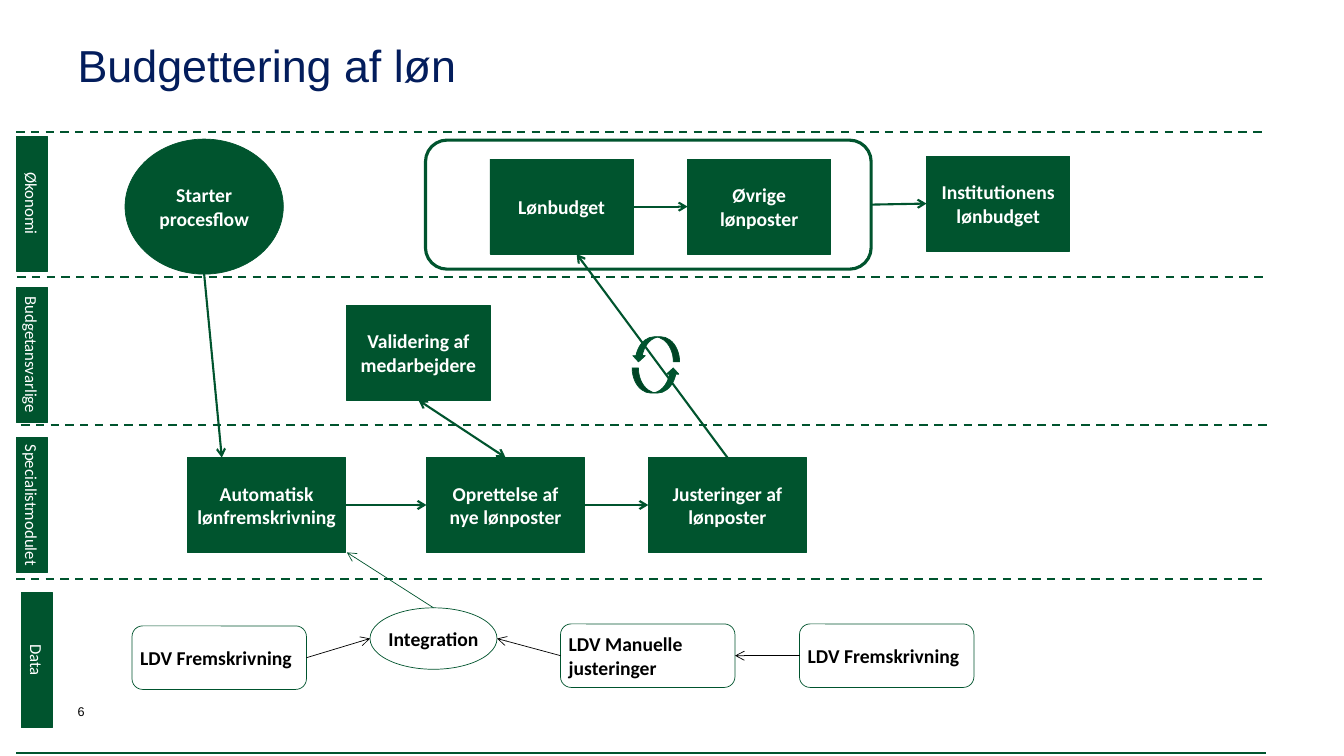
from lxml import etree
from pptx import Presentation
from pptx.dml.color import RGBColor
from pptx.enum.dml import MSO_LINE
from pptx.enum.shapes import MSO_CONNECTOR, MSO_SHAPE
from pptx.enum.text import MSO_ANCHOR, PP_ALIGN
from pptx.oxml.ns import qn
from pptx.util import Inches, Pt

RECT, OVAL, ROUND = MSO_SHAPE.RECTANGLE, MSO_SHAPE.OVAL, MSO_SHAPE.ROUNDED_RECTANGLE
CYCLE = MSO_SHAPE.CURVED_UP_ARROW
STRAIGHT = MSO_CONNECTOR.STRAIGHT
DASH = MSO_LINE.DASH
ANCHOR_TOP, ANCHOR_MIDDLE = MSO_ANCHOR.TOP, MSO_ANCHOR.MIDDLE
LEFT_ALIGN, CENTER = PP_ALIGN.LEFT, PP_ALIGN.CENTER
TOP, LEFT, BOTTOM, RIGHT = range(4)

COLORS = {"green": "00542E", "navy": "031D5C", "white": "FFFFFF", "black": "000000"}

TITLE = "Budgettering af løn"
PAGE_NUMBER = "6"
LANES = [
    ("Økonomi", 0.16, 1.35),
    ("Budgetansvarlige", 0.16, 2.85),
    ("Specialistmodulet", 0.16, 4.34),
    ("Data", 0.21, 5.88),
]
LANE_SIZE = (0.31, 1.34)
DIVIDERS = [(0.16, 1.31, True), (0.17, 2.75, True), (0.21, 4.22, True),
            (0.16, 5.74, True), (0.16, 7.47, False)]
DIVIDER_LENGTH = 12.4

SMALL, WIDE, SOURCE = (1.42, 0.94), (1.57, 0.94), (1.73, 0.63)
NORMAL, TIGHT, NONE = (0.1, 0.05), (0.04, 0.05), (0, 0)
STEPS = {
    "start": ("Starter procesflow", OVAL, (1.24, 1.38), (1.57, 1.34), NORMAL),
    "validation": ("Validering af medarbejdere", RECT, (3.44, 3.03), SMALL, NORMAL),
    "projection": ("Automatisk lønfremskrivning", RECT, (1.86, 4.54), WIDE, TIGHT),
    "creation": ("Oprettelse af nye lønposter", RECT, (4.23, 4.54), WIDE, NORMAL),
    "adjustment": ("Justeringer af lønposter", RECT, (6.43, 4.54), WIDE, NORMAL),
    "budget": ("Lønbudget", RECT, (4.86, 1.58), SMALL, NORMAL),
    "other": ("Øvrige lønposter", RECT, (6.82, 1.58), SMALL, NORMAL),
    "institution": ("Institutionens lønbudget", RECT, (9.19, 1.55), SMALL, NORMAL),
}
DATA_SOURCES = {
    "ldv_first": ("LDV Fremskrivning", ROUND, (1.31, 6.21), SOURCE),
    "integration": ("Integration", OVAL, (3.67, 6.03), (1.26, 0.61)),
    "ldv_manual": ("LDV Manuelle justeringer", ROUND, (5.56, 6.19), SOURCE),
    "ldv_last": ("LDV Fremskrivning", ROUND, (7.93, 6.19), SOURCE),
}
BUDGET_FRAME = ((4.22, 1.39), (4.42, 1.28))
CYCLE_ARROWS = [((6.27, 3.65), 0), ((6.27, 3.34), 180)]
CYCLE_SIZE = (0.47, 0.25)

FLOWS = [
    (("frame", RIGHT), ("institution", LEFT), "green", 1.5, False),
    (("ldv_first", RIGHT), ("integration", LEFT), "black", 0.5, False),
    (("ldv_manual", LEFT), ("integration", RIGHT), "black", 0.5, False),
    (("ldv_last", LEFT), ("ldv_manual", RIGHT), "black", 0.5, False),
    (("start", BOTTOM), (2.2, 4.54), "green", 1.5, False),
    (("integration", TOP), (3.44, 5.48), "green", 0.5, False),
    (("projection", RIGHT), ("creation", LEFT), "green", 1.5, False),
    (("creation", RIGHT), ("adjustment", LEFT), "green", 1.5, False),
    (("adjustment", TOP), (5.72, 2.52), "green", 1.5, False),
    (("budget", RIGHT), ("other", LEFT), "green", 1.5, False),
    (("creation", TOP), ("validation", BOTTOM), "green", 1.5, True),
]

prs = Presentation()
prs.slide_width, prs.slide_height = Inches(13.33), Inches(7.5)
slide = prs.slides.add_slide(prs.slide_layouts[5])
shapes = slide.shapes


def rgb(name):
    return RGBColor.from_string(COLORS[name])


def write(frame, text, size, color, align, font="Calibri", bold=False, insets=NONE):
    frame.word_wrap = True
    frame.margin_left = frame.margin_right = Inches(insets[0])
    frame.margin_top = frame.margin_bottom = Inches(insets[1])
    frame.text = text
    paragraph = frame.paragraphs[0]
    paragraph.alignment = align
    paragraph.font.name = font
    paragraph.font.size = Pt(size)
    paragraph.font.bold = bold
    paragraph.font.color.rgb = rgb(color)


def add_box(kind, position, size, filled=True, weight=0.5):
    box = shapes.add_shape(kind, *map(Inches, position + size))
    box.shadow.inherit = False
    if filled:
        box.fill.solid()
        box.fill.fore_color.rgb = rgb("green")
    else:
        box.fill.background()
    box.line.color.rgb = rgb("green")
    box.line.width = Pt(weight)
    box.text_frame.vertical_anchor = ANCHOR_MIDDLE
    return box


def add_line(start, end, color, weight):
    line = shapes.add_connector(STRAIGHT, *start, *end)
    line.line.color.rgb = rgb(color)
    line.line.width = Pt(weight)
    etree.SubElement(line.line._get_or_add_ln().getparent(), qn("a:effectLst"))
    return line


def side_point(box, side):
    x = box.left + (box.width // 2, 0, box.width // 2, box.width)[side]
    y = box.top + (0, box.height // 2, box.height, box.height // 2)[side]
    return x, y


def locate(end):
    if end[0] in boxes:
        return side_point(boxes[end[0]], end[1])
    return tuple(map(Inches, end))


def joinable(end):
    return end[0] in boxes and boxes[end[0]].auto_shape_type != OVAL


title = shapes.title
title.left, title.top, title.width, title.height = map(Inches, (0.77, 0.43, 11.8, 1.02))
write(title.text_frame, TITLE, 32, "navy", LEFT_ALIGN, "Arial")
title.text_frame.vertical_anchor = ANCHOR_TOP
title.text_frame.paragraphs[0].line_spacing = 0.9

number = shapes.add_textbox(*map(Inches, (0.77, 6.98, 0.31, 0.39)))
write(number.text_frame, PAGE_NUMBER, 9, "black", LEFT_ALIGN, "Arial")

for label, left, top in LANES:
    lane = add_box(RECT, (left, top), LANE_SIZE)
    write(lane.text_frame, label, 12, "white", CENTER)
    lane.text_frame._txBody.bodyPr.set("vert", "vert")

for left, top, dashed in DIVIDERS:
    divider = add_line((Inches(left), Inches(top)),
                       (Inches(left + DIVIDER_LENGTH), Inches(top)), "green", 1.5)
    if dashed:
        divider.line.dash_style = DASH

boxes = {"frame": add_box(ROUND, *BUDGET_FRAME, filled=False, weight=2.25)}
for key, (label, kind, position, size, insets) in STEPS.items():
    boxes[key] = add_box(kind, position, size)
    write(boxes[key].text_frame, label, 14, "white", CENTER, bold=True, insets=insets)
for key, (label, kind, position, size) in DATA_SOURCES.items():
    boxes[key] = add_box(kind, position, size, filled=False)
    oval = kind == OVAL
    write(boxes[key].text_frame, label, 14, "black", CENTER if oval else LEFT_ALIGN,
          bold=True, insets=NONE if oval else (0.05, 0))
    boxes[key].text_frame.word_wrap = not oval

for start, end, color, weight, two_way in FLOWS:
    flow = add_line(locate(start), locate(end), color, weight)
    if joinable(start):
        flow.begin_connect(boxes[start[0]], start[1])
    if joinable(end):
        flow.end_connect(boxes[end[0]], end[1])
    for tip in ("a:headEnd", "a:tailEnd") if two_way else ("a:tailEnd",):
        etree.SubElement(flow.line._get_or_add_ln(), qn(tip), type="arrow")

for position, angle in CYCLE_ARROWS:
    add_box(CYCLE, position, CYCLE_SIZE).rotation = angle

prs.save("out.pptx")
